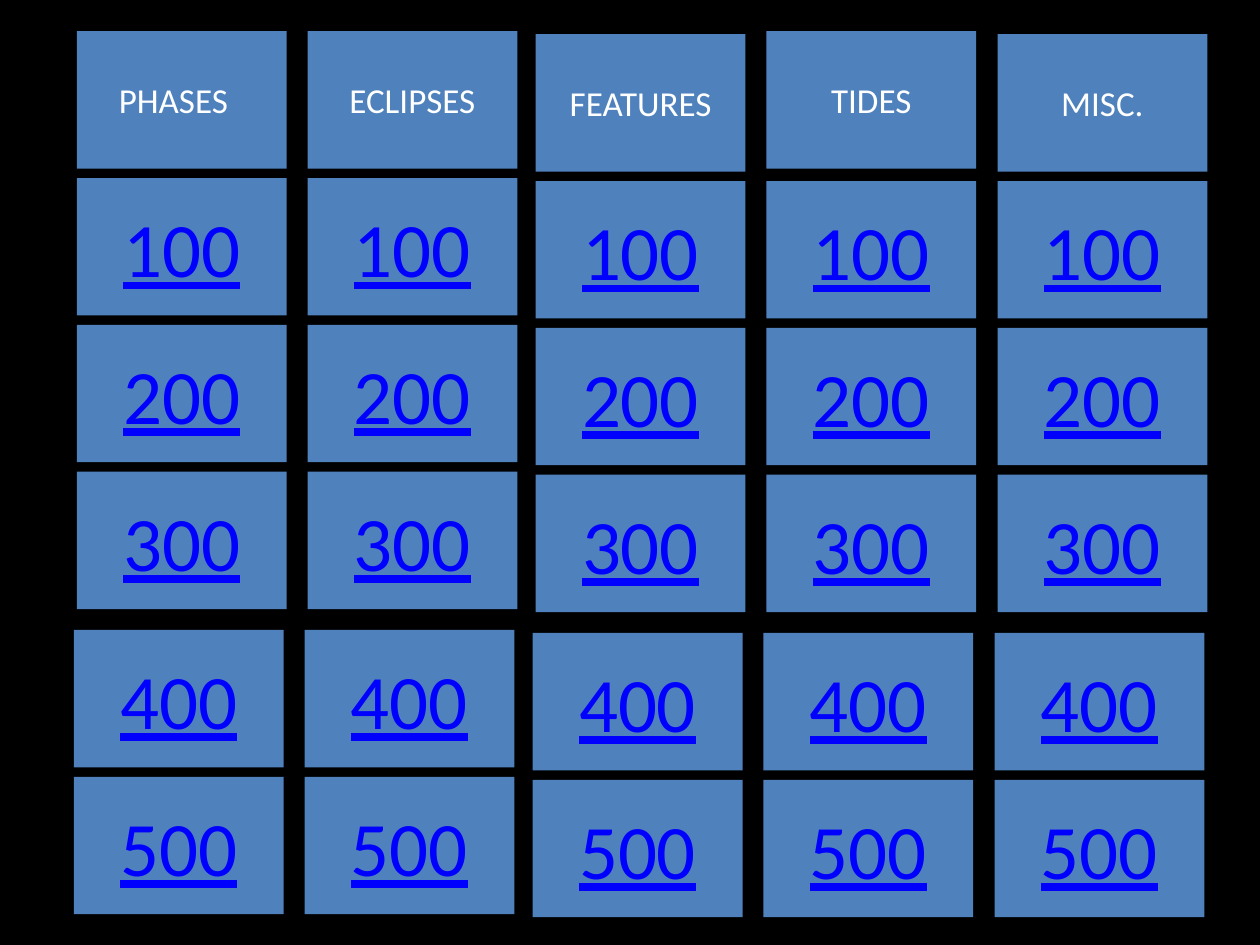
from pptx import Presentation
from pptx.dml.color import RGBColor
from pptx.enum.shapes import MSO_SHAPE
from pptx.enum.text import MSO_ANCHOR, MSO_AUTO_SIZE, PP_ALIGN
from pptx.util import Cm, Pt

RECT = MSO_SHAPE.RECTANGLE
MIDDLE = MSO_ANCHOR.MIDDLE
CENTER = PP_ALIGN.CENTER
NO_FIT = MSO_AUTO_SIZE.NONE

COLORS = {"background": "000000", "card": "4F81BD", "heading": "FFFFFF", "points": "0000FF"}
FONT = "Calibri"

CATEGORIES = [
    {"name": "PHASES\t", "left": 1.55, "head_drop": 0, "drop": 0},
    {"name": "ECLIPSES", "left": 6.2, "head_drop": 0, "drop": 0},
    {"name": "FEATURES", "left": 10.8, "head_drop": 0.06, "drop": 0.06},
    {"name": "TIDES", "left": 15.45, "head_drop": 0, "drop": 0.06},
    {"name": "MISC.", "left": 20.11, "head_drop": 0.06, "drop": 0.06},
]
POINTS = ["100", "200", "300", "400", "500"]

CARD_W, CARD_H = 4.23, 2.77
TOP, ROW_PITCH = 0.63, 2.96
LOWER_FROM, LOWER_DX, LOWER_DY = 4, -0.06, 0.23


def rgb(name):
    return RGBColor.from_string(COLORS[name])


def format_card(sp, left, top, text, size, color, underline):
    sp.left, sp.top = Cm(left), Cm(top)
    sp.width, sp.height = Cm(CARD_W), Cm(CARD_H)
    sp.shadow.inherit = False
    sp.fill.solid()
    sp.fill.fore_color.rgb = rgb("card")
    sp.line.fill.background()
    tf = sp.text_frame
    tf.word_wrap = True
    tf.auto_size = NO_FIT
    tf.vertical_anchor = MIDDLE
    p = tf.paragraphs[0]
    p.alignment = CENTER
    r = p.add_run()
    r.text = text
    r.font.name = FONT
    r.font.size = Pt(size)
    r.font.color.rgb = rgb(color)
    if underline:
        r.font.underline = True


def add_card(s):
    return s.shapes.add_shape(RECT, 0, 0, Cm(CARD_W), Cm(CARD_H))


def main():
    prs = Presentation()
    prs.slide_width, prs.slide_height = Cm(25.4), Cm(19.05)
    s = prs.slides.add_slide(prs.slide_layouts[5])
    s.background.fill.solid()
    s.background.fill.fore_color.rgb = rgb("background")

    for col, category in enumerate(CATEGORIES):
        for row, points in enumerate(POINTS, start=1):
            sp = s.shapes.title if (col, row) == (0, 1) else add_card(s)
            lower = row >= LOWER_FROM
            left = category["left"] + lower * LOWER_DX
            top = TOP + row * ROW_PITCH + category["drop"] + lower * LOWER_DY
            format_card(sp, left, top, points, 44, "points", True)
        format_card(add_card(s), category["left"], TOP + category["head_drop"],
                    category["name"], 20, "heading", False)

    prs.save("out.pptx")


if __name__ == "__main__":
    main()
